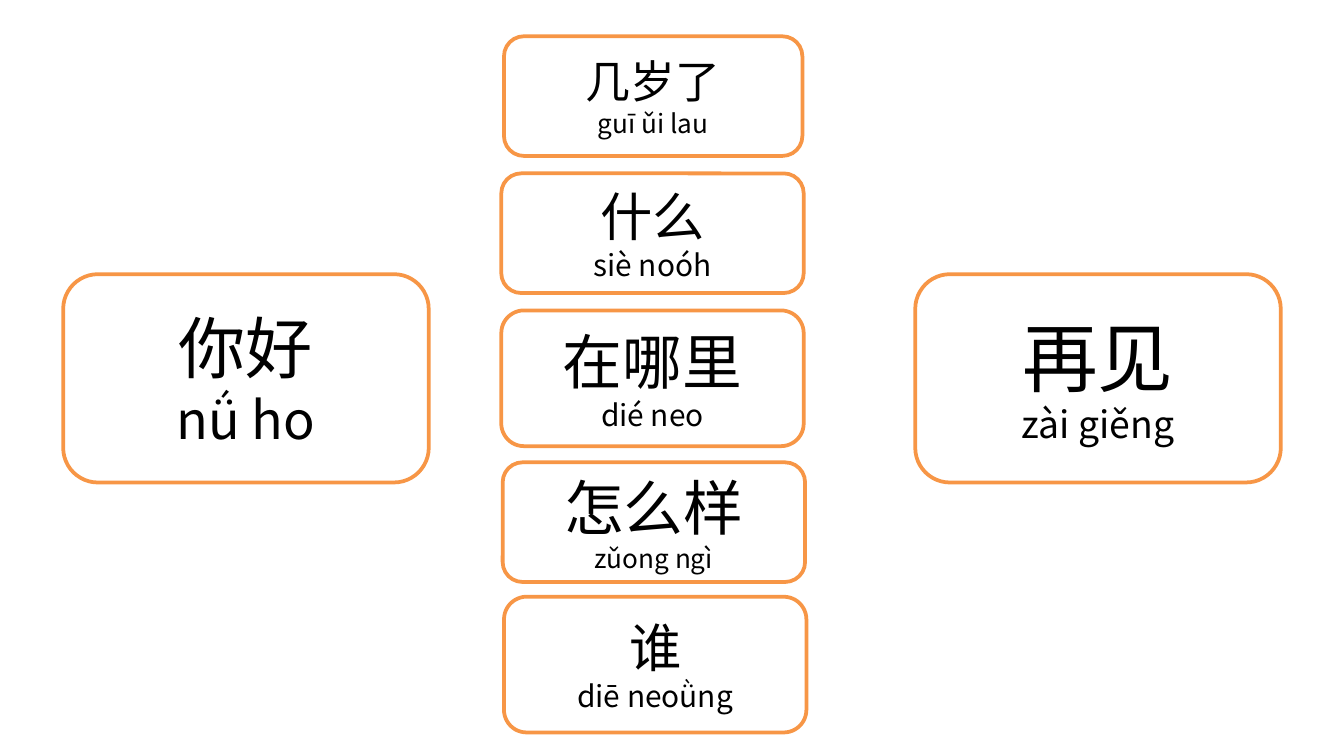
from dataclasses import dataclass

from lxml.etree import SubElement
from pptx import Presentation
from pptx.dml.color import RGBColor
from pptx.enum.shapes import MSO_SHAPE as Shape
from pptx.enum.text import MSO_ANCHOR as Anchor, PP_ALIGN as Align
from pptx.oxml.ns import qn
from pptx.slide import Slide
from pptx.util import Inches, Pt

ORANGE = RGBColor(0xF7, 0x96, 0x46)
WHITE = RGBColor(0xFF, 0xFF, 0xFF)
BLACK = RGBColor(0x00, 0x00, 0x00)
FONT = "Noto Sans CJK SC"
FRAME_FORMAT = {"word_wrap": True, "vertical_anchor": Anchor.MIDDLE}


@dataclass(frozen=True)
class PhraseCard:
    phrase: str
    phrase_size: float
    reading: str
    reading_size: float
    left: float
    top: float
    width: float = 2.25
    height: float = 0.89


GREETING = {"top": 2.04, "width": 2.72, "height": 1.55}
CARDS = [
    PhraseCard("你好", 36, "nǘ ho", 28, left=0.47, **GREETING),
    PhraseCard("几岁了", 24, "guī ǔi lau", 14, 3.75, 0.27, width=2.22),
    PhraseCard("什么", 28, "siè noóh", 16, 3.73, 1.29),
    PhraseCard("怎么样", 32, "zǔong ngì", 14, 3.74, 3.44),
    PhraseCard("在哪里", 32, "dié neo", 16, 3.73, 2.31, height=1.01),
    PhraseCard("谁", 28, "diē neoǜng", 16, 3.75, 4.44, height=1.01),
    PhraseCard("再见", 40.5, "zài giěng", 20, left=6.81, **GREETING),
]


def write_line(paragraph, text: str, size: float) -> None:
    paragraph.alignment = Align.CENTER
    run = paragraph.add_run()
    run.text = text
    for attribute, value in {"size": Pt(size), "name": FONT}.items():
        setattr(run.font, attribute, value)
    run.font.color.rgb = BLACK
    # Chinese characters take their typeface from the East Asian slot.
    SubElement(run._r.get_or_add_rPr(), qn("a:ea"), typeface=FONT)


def draw_card(slide: Slide, card: PhraseCard) -> None:
    box = slide.shapes.add_shape(
        Shape.ROUNDED_RECTANGLE,
        Inches(card.left), Inches(card.top),
        Inches(card.width), Inches(card.height),
    )
    box.shadow.inherit = False
    box.fill.solid()
    box.fill.fore_color.rgb = WHITE
    box.line.color.rgb = ORANGE
    box.line.width = Pt(2)

    frame = box.text_frame
    for attribute, value in FRAME_FORMAT.items():
        setattr(frame, attribute, value)
    write_line(frame.paragraphs[0], card.phrase, card.phrase_size)
    write_line(frame.add_paragraph(), card.reading, card.reading_size)


def main() -> None:
    deck = Presentation()
    deck.slide_width = Inches(10)
    deck.slide_height = Inches(10 * 9 / 16)
    slide = deck.slides.add_slide(deck.slide_layouts[6])
    for card in CARDS:
        draw_card(slide, card)
    deck.save("out.pptx")


if __name__ == "__main__":
    main()
